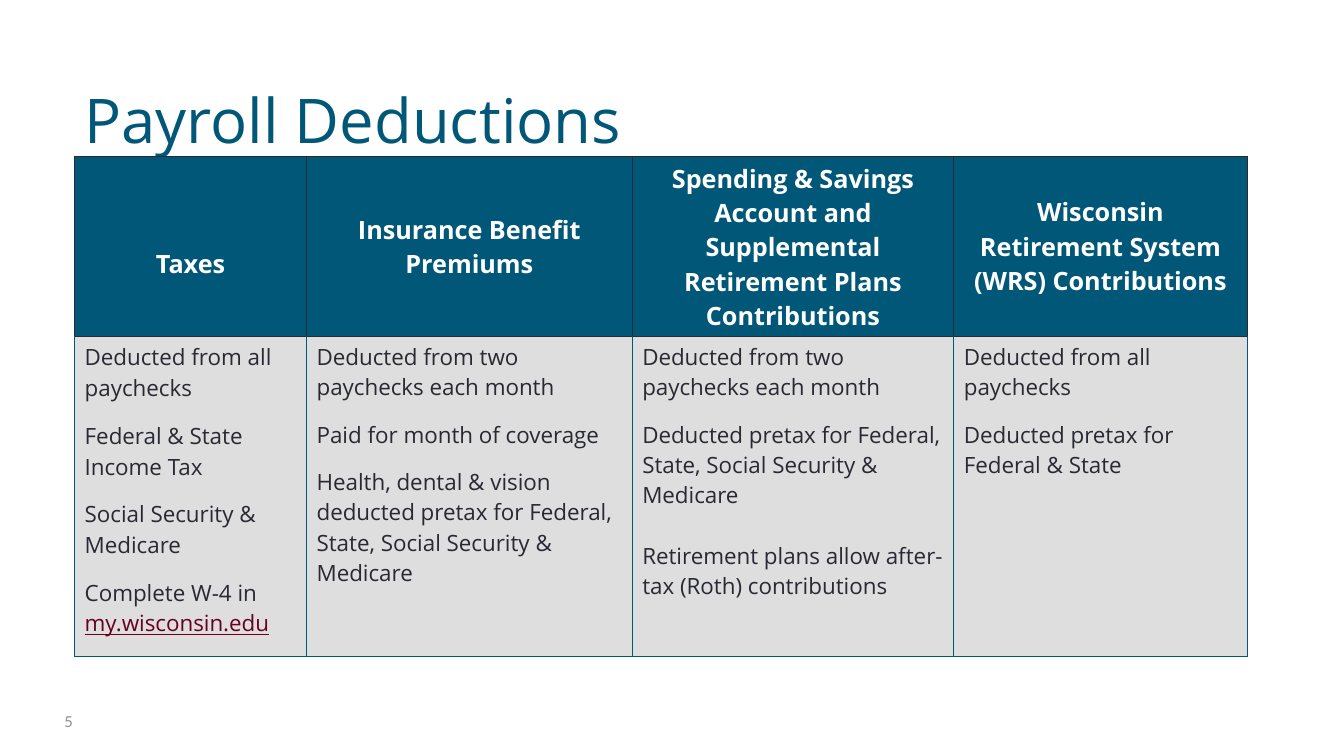
"""Build the Payroll Deductions slide."""
from lxml import etree
from pptx import Presentation, util as u
from pptx.dml.color import RGBColor
from pptx.enum import text
from pptx.oxml import ns

TEAL, INK, GREY, WHITE, LINK, MUTED = "005777", "292934", "DEDEDE", "FFFFFF", "68001F", "8E8E90"
TITLE, NUMBER = "Payroll Deductions", "5"
COLUMNS = [
    {"width": 2.3, "head": ["Taxes"], "head_top": 0.39, "leading": 22,
     "body": ["Deducted from all paychecks", "Federal & State Income Tax",
              "Social Security & Medicare", ("Complete W-4 in ", "my.wisconsin.edu")]},
    {"width": 3.23, "head": ["Insurance Benefit Premiums"],
     "body": ["Deducted from two paychecks each month", "Paid for month of coverage",
              "Health, dental & vision deducted pretax for Federal, State, Social Security & Medicare"]},
    {"width": 3.19,
     "head": ["Spending & Savings Account and", "Supplemental Retirement Plans", "Contributions"],
     "body": ["Deducted from two paychecks each month",
              "Deducted pretax for Federal, State, Social Security & Medicare",
              "Retirement plans allow after-tax (Roth) contributions"], "last_gap": 21.5},
    {"width": 2.91, "head": ["Wisconsin Retirement System (WRS) Contributions"],
     "body": ["Deducted from all paychecks", "Deducted pretax for Federal & State"]},
]
ROWS = [1.79, 3.17]
LEFT, TABLE_TOP = 0.74, 1.55
HEAD = {"size": 18, "bold": True, "color": WHITE}
BODY = {"size": 16, "bold": False, "color": INK}


def rgb(value):
    """Return a colour from a hex string."""
    return RGBColor.from_string(value)


def style(font, size, color, name="Open Sans", **flags):
    """Apply format values to a font."""
    for key, value in {"size": u.Pt(size), "name": name, **flags}.items():
        setattr(font, key, value)
    font.color.rgb = rgb(color)


def write(frame, lines, look, **layout):
    """Write lines as paragraphs, with tuples as a plain run and a link-styled run."""
    for index, line in enumerate(lines):
        para = frame.paragraphs[0] if index == 0 else frame.add_paragraph()
        for key, value in layout.items():
            if index or key != "space_before":
                setattr(para, key, value)
        plain, *links = line if isinstance(line, tuple) else (line,)
        for words, extra in [(plain, {})] + [(link, {"color": LINK, "underline": True}) for link in links]:
            span = para.add_run()
            span.text = words
            style(span.font, **{**look, **extra})


def paint(cell, fill, edges):
    """Give a cell its borders and fill."""
    properties = cell._tc.get_or_add_tcPr()
    for side, color in zip("LRTB", edges):
        line = etree.SubElement(properties, ns.qn(f"a:ln{side}"), w=str(u.Pt(1)))
        solid = etree.SubElement(line, ns.qn("a:solidFill"))
        etree.SubElement(solid, ns.qn("a:srgbClr"), val=color)
    cell.fill.solid()
    cell.fill.fore_color.rgb = rgb(fill)


def label(page, area, words, anchor, look, bottom=0.05):
    """Add a one-line text box."""
    frame = page.shapes.add_textbox(*map(u.Inches, area)).text_frame
    frame.word_wrap, frame.vertical_anchor, frame.margin_bottom = True, anchor, u.Inches(bottom)
    write(frame, [words], look)


def deductions(page):
    """Add the table of deductions."""
    widths = [column["width"] for column in COLUMNS]
    area = (LEFT, TABLE_TOP, sum(widths), sum(ROWS))
    table = page.shapes.add_table(len(ROWS), len(COLUMNS), *map(u.Inches, area)).table
    for row, height in zip(table.rows, ROWS):
        row.height = u.Inches(height)
    for index, column in enumerate(COLUMNS):
        table.columns[index].width = u.Inches(column["width"])
        head, body = table.cell(0, index), table.cell(1, index)
        head.vertical_anchor = text.MSO_ANCHOR.MIDDLE
        head.margin_top = u.Inches(column.get("head_top", 0.05))
        write(head.text_frame, column["head"], HEAD, alignment=text.PP_ALIGN.CENTER)
        leading = {"line_spacing": u.Pt(column["leading"])} if "leading" in column else {}
        write(body.text_frame, column["body"], BODY, space_before=u.Pt(12), **leading)
        if "last_gap" in column:
            body.text_frame.paragraphs[-1].space_before = u.Pt(column["last_gap"])
        paint(head, TEAL, [INK] * 4)
        paint(body, GREY, [TEAL, TEAL, INK, TEAL])


def main():
    """Build and save the deck."""
    deck = Presentation()
    deck.slide_width, deck.slide_height = u.Inches(13.33), u.Inches(7.5)
    page = deck.slides.add_slide(deck.slide_layouts[6])
    label(page, (LEFT, 0.3, 11.94, 1.25), TITLE, text.MSO_ANCHOR.BOTTOM,
          {"size": 44, "color": TEAL}, bottom=0)
    label(page, (0.54, 6.95, 0.56, 0.4), NUMBER, text.MSO_ANCHOR.MIDDLE,
          {"size": 12, "color": MUTED, "name": "Calibri"})
    deductions(page)
    deck.save("out.pptx")


if __name__ == "__main__":
    main()
